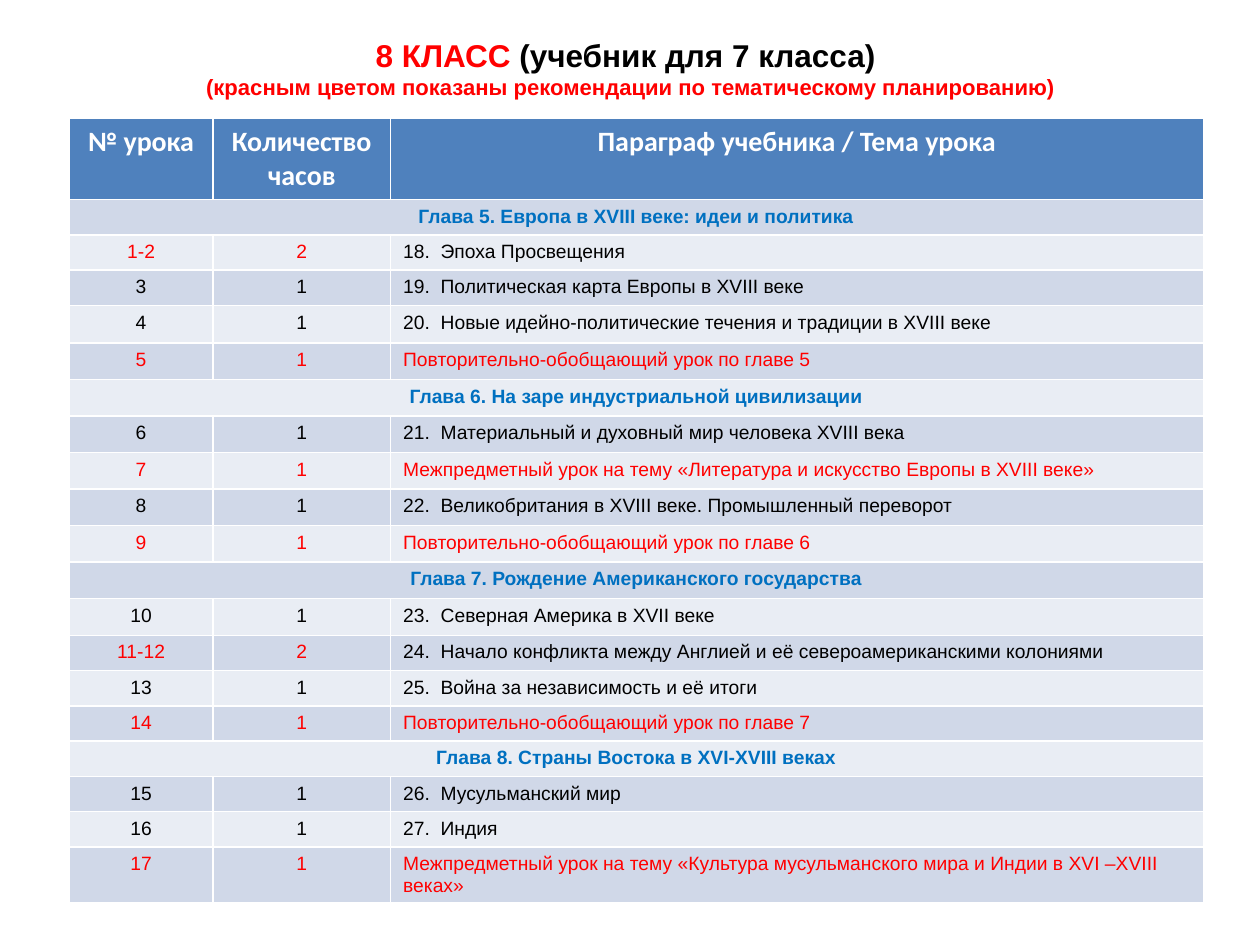
from pptx import Presentation
from pptx.dml.color import RGBColor
from pptx.enum.text import MSO_ANCHOR, PP_ALIGN
from pptx.util import Inches, Pt

CENTER, LEFT = PP_ALIGN.CENTER, PP_ALIGN.LEFT
MIDDLE = MSO_ANCHOR.MIDDLE
COLORS = {"red": "FF0000", "black": "000000", "white": "FFFFFF",
          "blue": "0070C0", "head": "4F81BD", "odd": "D0D8E8", "even": "E9EDF4"}

HEADS = ["№ урока", "Количество часов", "Параграф учебника / Тема урока"]
ROWS = [
    ["Глава 5. Европа в XVIII веке: идеи и политика"],
    ["1-2", "2", "18.  Эпоха Просвещения"],
    ["3", "1", "19.  Политическая карта Европы в XVIII веке"],
    ["4", "1", "20.  Новые идейно-политические течения и традиции в XVIII веке"],
    ["5", "1", "Повторительно-обобщающий урок по главе 5"],
    ["Глава 6. На заре индустриальной цивилизации"],
    ["6", "1", "21.  Материальный и духовный мир человека XVIII века"],
    ["7", "1", "Межпредметный урок на тему «Литература и искусство Европы в XVIII веке»"],
    ["8", "1", "22.  Великобритания в XVIII веке. Промышленный переворот"],
    ["9", "1", "Повторительно-обобщающий урок по главе 6"],
    ["Глава 7. Рождение Американского государства"],
    ["10", "1", "23.  Северная Америка в XVII веке"],
    ["11-12", "2", "24.  Начало конфликта между Англией и её североамериканскими колониями"],
    ["13", "1", "25.  Война за независимость и её итоги"],
    ["14", "1", "Повторительно-обобщающий урок по главе 7"],
    ["Глава 8. Страны Востока в XVI-XVIII веках"],
    ["15", "1", "26.  Мусульманский мир"],
    ["16", "1", "27.  Индия"],
    ["17", "1", "Межпредметный урок на тему «Культура мусульманского мира и Индии в XVI –XVIII веках»"],
]
WIDTHS = [1.14, 1.41, 6.45]
HEIGHTS = [0.62] + [0.28] * 3 + [0.3] + [0.29] * 8 + [0.28] * 6 + [0.42]


def add_run(para, text, color, size, bold=True, name="Arial"):
    run = para.add_run()
    run.text = text
    for key, value in {"size": Pt(size), "bold": bold, "name": name}.items():
        setattr(run.font, key, value)
    run.font.color.rgb = RGBColor.from_string(COLORS[color])


def fill_cell(cell, text, back, align, *style):
    cell.fill.solid()
    cell.fill.fore_color.rgb = RGBColor.from_string(COLORS[back])
    para = cell.text_frame.paragraphs[0]
    para.alignment = align
    add_run(para, text, *style)


prs = Presentation()
prs.slide_width, prs.slide_height = Inches(10), Inches(7.5)
slide = prs.slides.add_slide(prs.slide_layouts[5])

title = slide.shapes.title
box = {"left": 0.5, "top": 0.3, "width": 9, "height": 0.48}
for key, value in box.items():
    setattr(title, key, Inches(value))
title.text_frame.vertical_anchor = MIDDLE
para = title.text_frame.paragraphs[0]
para.alignment = CENTER
add_run(para, "8 КЛАСС ", "red", 18)
add_run(para, "(учебник для 7 класса) ", "black", 18)
para.add_line_break()
add_run(para, "(красным цветом показаны рекомендации по тематическому планированию)", "red", 12.6)

table = slide.shapes.add_table(len(HEIGHTS), len(WIDTHS), Inches(0.55), Inches(0.94),
                               Inches(sum(WIDTHS)), Inches(sum(HEIGHTS))).table
for col, width in zip(table.columns, WIDTHS):
    col.width = Inches(width)
for row, height in zip(table.rows, HEIGHTS):
    row.height = Inches(height)

for c, head in enumerate(HEADS):
    fill_cell(table.cell(0, c), head, "head", CENTER, "white", 16, True, "Calibri")

for r, row in enumerate(ROWS, 1):
    back = "odd" if r % 2 else "even"
    if len(row) == 1:
        table.cell(r, 0).merge(table.cell(r, 2))
        fill_cell(table.cell(r, 0), row[0], back, CENTER, "blue", 11)
        continue
    num, hours, topic = row
    extra = not topic[0].isdigit()
    mark = "red" if extra or hours == "2" else "black"
    fill_cell(table.cell(r, 0), num, back, CENTER, mark, 11, False)
    fill_cell(table.cell(r, 1), hours, back, CENTER, mark, 11, False)
    fill_cell(table.cell(r, 2), topic, back, LEFT, "red" if extra else "black", 11, False)

prs.save("out.pptx")
